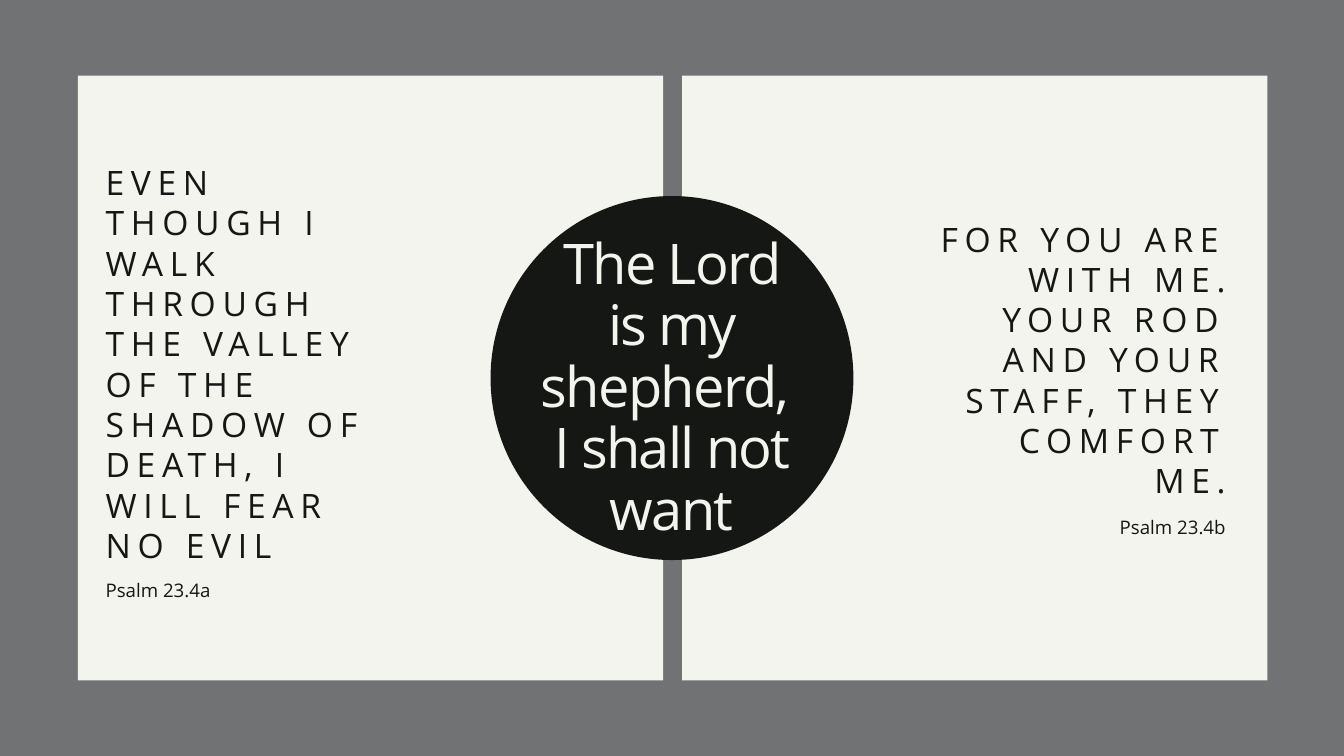
import dataclasses

import pptx
import pptx.dml.color
import pptx.enum.shapes
import pptx.enum.text
import pptx.util

ALIGN = pptx.enum.text.PP_ALIGN
SHAPE = pptx.enum.shapes.MSO_SHAPE


@dataclasses.dataclass(frozen=True)
class Theme:
    """Colours, font and type styles of the slide."""
    grey: str = "717273"
    cream: str = "F3F4ED"
    ink: str = "151715"
    font: str = "Open Sans"
    title: tuple = (60, 66, -1.8)
    verse: tuple = (36, 43.2, 7.2)
    reference: tuple = (20, 28, 0)


THEME = Theme()


def rgb(value):
    """Return the colour object of a hex value."""
    return pptx.dml.color.RGBColor.from_string(value)


def place(prs, x, y, w, h):
    """Turn percentages of the slide size into left, top, width and height."""
    return [round(size * share / 100) for size, share in
            zip((prs.slide_width, prs.slide_height) * 2, (x, y, w, h))]


def set_all(obj, values):
    """Set attributes from a dict of format values."""
    for name, value in values.items():
        setattr(obj, name, value)


def add_block(prs, s, kind, box, color):
    """Add a plain filled shape without line or shadow."""
    sp = s.shapes.add_shape(kind, *place(prs, *box))
    sp.shadow.inherit = False
    sp.fill.solid()
    sp.fill.fore_color.rgb = rgb(color)
    sp.line.fill.background()


def add_text(prs, s, box, lines, style, color, align):
    """Add a text box without insets, one paragraph a line."""
    size, leading, spacing = style
    tf = s.shapes.add_textbox(*place(prs, *box)).text_frame
    set_all(tf, {
        "word_wrap": True,
        "auto_size": pptx.enum.text.MSO_AUTO_SIZE.SHAPE_TO_FIT_TEXT,
        "margin_left": 0, "margin_top": 0,
        "margin_right": 0, "margin_bottom": 0,
    })
    for i, line in enumerate(lines):
        p = tf.add_paragraph() if i else tf.paragraphs[0]
        set_all(p, {"alignment": align, "line_spacing": pptx.util.Pt(leading)})
        r = p.add_run()
        r.text = line
        set_all(r.font, {"name": THEME.font, "size": pptx.util.Pt(size)})
        r.font.color.rgb = rgb(color)
        r.font._element.set("spc", str(round(spacing * 100)))


def add_verse(prs, s, box, lines, reference, align):
    """Add a verse with its reference below it."""
    x, y, w, h = box
    add_text(prs, s, box, lines, THEME.verse, THEME.ink, align)
    add_text(prs, s, (x, y + h + 1.9, w, 3.29), [reference],
             THEME.reference, THEME.ink, align)


def main():
    """Build the slide and save it."""
    prs = pptx.Presentation()
    set_all(prs, {"slide_width": pptx.util.Inches(20),
                  "slide_height": pptx.util.Inches(11.25)})
    s = prs.slides.add_slide(prs.slide_layouts[6])
    s.background.fill.solid()
    s.background.fill.fore_color.rgb = rgb(THEME.grey)

    for x in (5.8, 50.75):
        add_block(prs, s, SHAPE.RECTANGLE, (x, 10, 43.55, 80), THEME.cream)
    add_block(prs, s, SHAPE.OVAL, (36.5, 25.93, 27, 48.15), THEME.ink)
    add_text(prs, s, (40.2, 30.93, 19.55, 40.89),
             ["The Lord is my shepherd, ", "I shall not want"],
             THEME.title, THEME.cream, ALIGN.CENTER)
    add_verse(prs, s, (69.55, 28.89, 21.65, 36.98),
              ["FOR YOU ARE WITH ME.",
               "YOUR ROD AND YOUR STAFF, THEY COMFORT ME."],
              "Psalm 23.4b", ALIGN.RIGHT)
    add_verse(prs, s, (7.85, 21.42, 19.75, 52.8),
              ["EVEN THOUGH I WALK THROUGH THE VALLEY OF THE SHADOW OF "
               "DEATH, I WILL FEAR NO EVIL"],
              "Psalm 23.4a", ALIGN.LEFT)
    prs.save("out.pptx")


if __name__ == "__main__":
    main()
